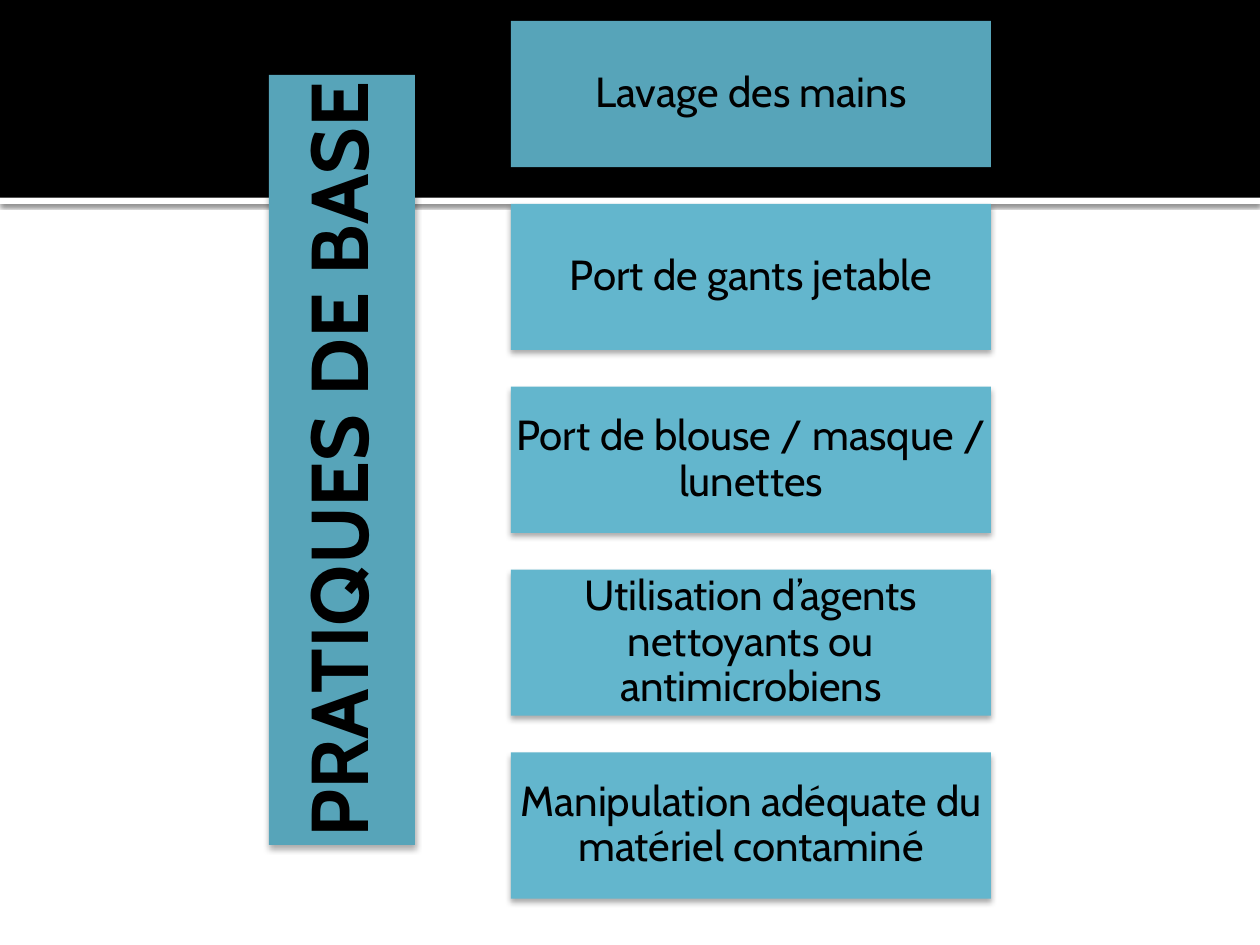
"""Build the slide listing the basic hygiene practices."""
from dataclasses import dataclass

from lxml.etree import SubElement
from pptx import Presentation
from pptx.dml.color import RGBColor
from pptx.enum.shapes import MSO_SHAPE
from pptx.enum.text import MSO_ANCHOR, MSO_AUTO_SIZE, PP_ALIGN
from pptx.oxml.ns import qn
from pptx.shapes.autoshape import Shape
from pptx.slide import Slide
from pptx.util import Pt

FONT = "Cabin"
BLACK, WHITE = "000000", "FFFFFF"
DARK_BLUE, LIGHT_BLUE = "57A4B9", "63B6CD"
SLIDE_WIDTH, SLIDE_HEIGHT = 720, 540
BAND_HEIGHT, RULE_HEIGHT = 113, 3.6
BOX_LEFT, BOX_TOP, BOX_WIDTH, BOX_HEIGHT = 292, 12, 274.3, 83.5
BOX_STEP = 104.5
TITLE = "PRATIQUES DE BASE"
TITLE_LENGTH, TITLE_CENTER_X = 440, 195.4
PRACTICES = [
    "Lavage des mains",
    "Port de gants jetable",
    "Port de blouse / masque / lunettes",
    "Utilisation d’agents nettoyants ou antimicrobiens",
    "Manipulation adéquate du matériel contaminé",
]


@dataclass(frozen=True)
class Shadow:
    opacity: int
    blur: float
    distance: float


@dataclass(frozen=True)
class Label:
    text: str
    size: float
    margin: float
    bold: bool = False


BOX_SHADOW = Shadow(32, 3.5, 2.2)
RULE_SHADOW = Shadow(60, 2.5, 0.8)


def color(value: str) -> RGBColor:
    return RGBColor.from_string(value)


def paint(shape: Shape, fill: str, shadow: Shadow | None = None) -> None:
    shape.fill.solid()
    shape.fill.fore_color.rgb = color(fill)
    shape.line.fill.background()
    shape.shadow.inherit = False
    if shadow:
        effects = shape.element.find(".//" + qn("a:effectLst"))
        outer = SubElement(
            effects, qn("a:outerShdw"),
            blurRad=str(Pt(shadow.blur)), dist=str(Pt(shadow.distance)),
            dir="5400000", algn="ctr", rotWithShape="0",
        )
        tint = SubElement(outer, qn("a:srgbClr"), val=BLACK)
        SubElement(tint, qn("a:alpha"), val=str(shadow.opacity * 1000))


def write(shape: Shape, label: Label) -> None:
    frame = shape.text_frame
    frame.text = label.text
    frame.word_wrap = True
    frame.auto_size = MSO_AUTO_SIZE.NONE
    frame.vertical_anchor = MSO_ANCHOR.MIDDLE
    frame.margin_left = frame.margin_right = Pt(label.margin)
    frame.margin_top = frame.margin_bottom = Pt(label.margin)
    para = frame.paragraphs[0]
    para.alignment = PP_ALIGN.CENTER
    para.line_spacing = 0.9
    font = para.runs[0].font
    font.name, font.size, font.bold = FONT, Pt(label.size), label.bold
    font.color.rgb = color(BLACK)


def add_box(slide: Slide, left: float, top: float, width: float, height: float) -> Shape:
    return slide.shapes.add_shape(
        MSO_SHAPE.RECTANGLE, Pt(left), Pt(top), Pt(width), Pt(height)
    )


def add_background(slide: Slide) -> None:
    rule = add_box(slide, 0, BAND_HEIGHT, SLIDE_WIDTH, RULE_HEIGHT)
    paint(rule, WHITE, RULE_SHADOW)
    band = add_box(slide, 0, 0, SLIDE_WIDTH, BAND_HEIGHT)
    paint(band, BLACK)
    for shape in (rule, band):
        slide.shapes.title.element.addprevious(shape.element)


def add_title(slide: Slide) -> None:
    title = slide.shapes.title
    column_middle = BOX_TOP + (BOX_STEP * (len(PRACTICES) - 1) + BOX_HEIGHT) / 2
    title.left = Pt(TITLE_CENTER_X - TITLE_LENGTH / 2)
    title.top = Pt(column_middle - BOX_HEIGHT / 2)
    title.width, title.height = Pt(TITLE_LENGTH), Pt(BOX_HEIGHT)
    title.rotation = 270
    paint(title, DARK_BLUE, BOX_SHADOW)
    write(title, Label(TITLE, 46, 2.1, bold=True))


def add_practices(slide: Slide) -> None:
    for index, practice in enumerate(PRACTICES):
        box = add_box(slide, BOX_LEFT, BOX_TOP + index * BOX_STEP, BOX_WIDTH, BOX_HEIGHT)
        paint(box, LIGHT_BLUE if index else DARK_BLUE, BOX_SHADOW)
        write(box, Label(practice, 24, 1.2))


def main() -> None:
    deck = Presentation()
    deck.slide_width, deck.slide_height = Pt(SLIDE_WIDTH), Pt(SLIDE_HEIGHT)
    slide = deck.slides.add_slide(deck.slide_layouts.get_by_name("Title Only"))
    add_background(slide)
    add_title(slide)
    add_practices(slide)
    deck.save("out.pptx")


if __name__ == "__main__":
    main()
